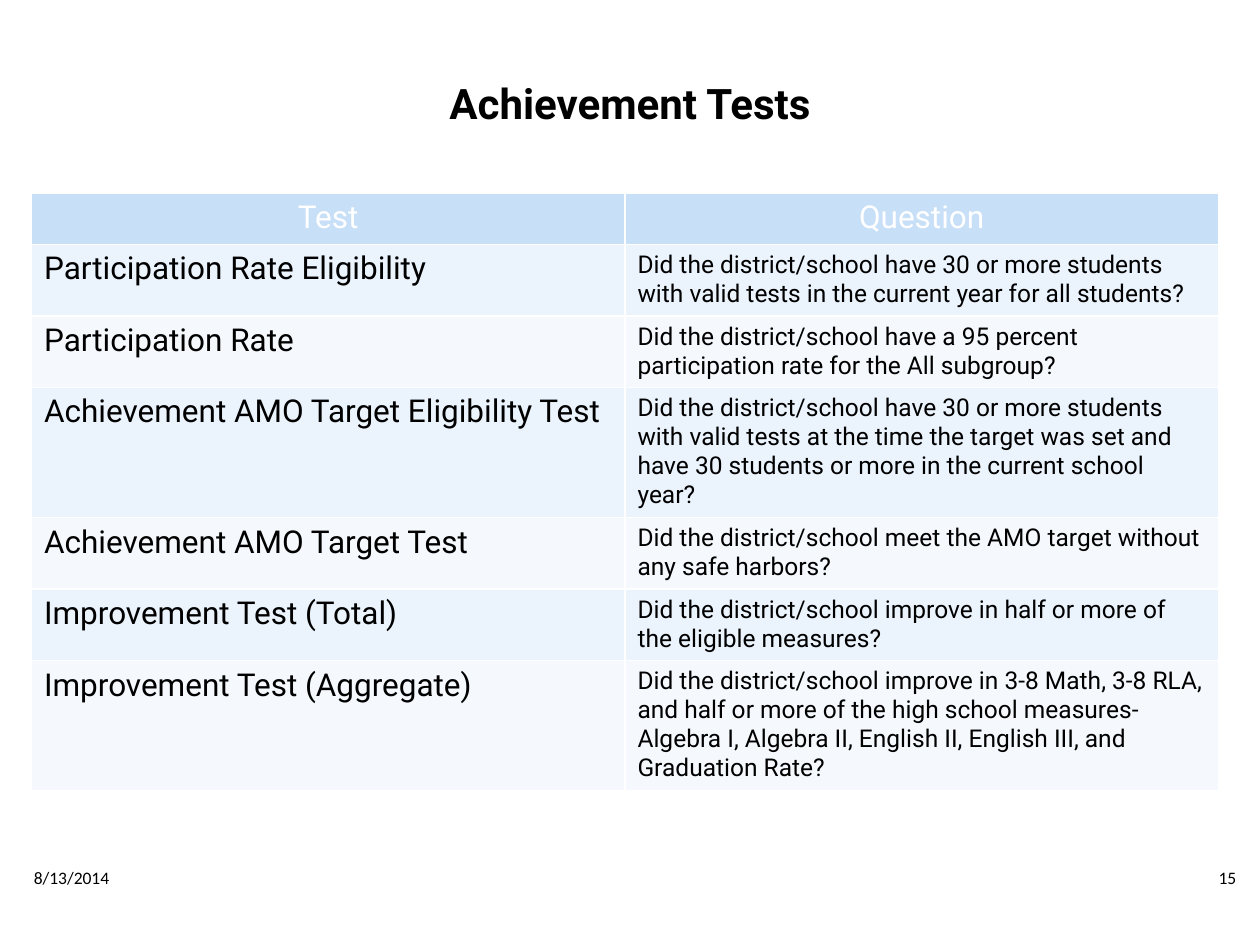
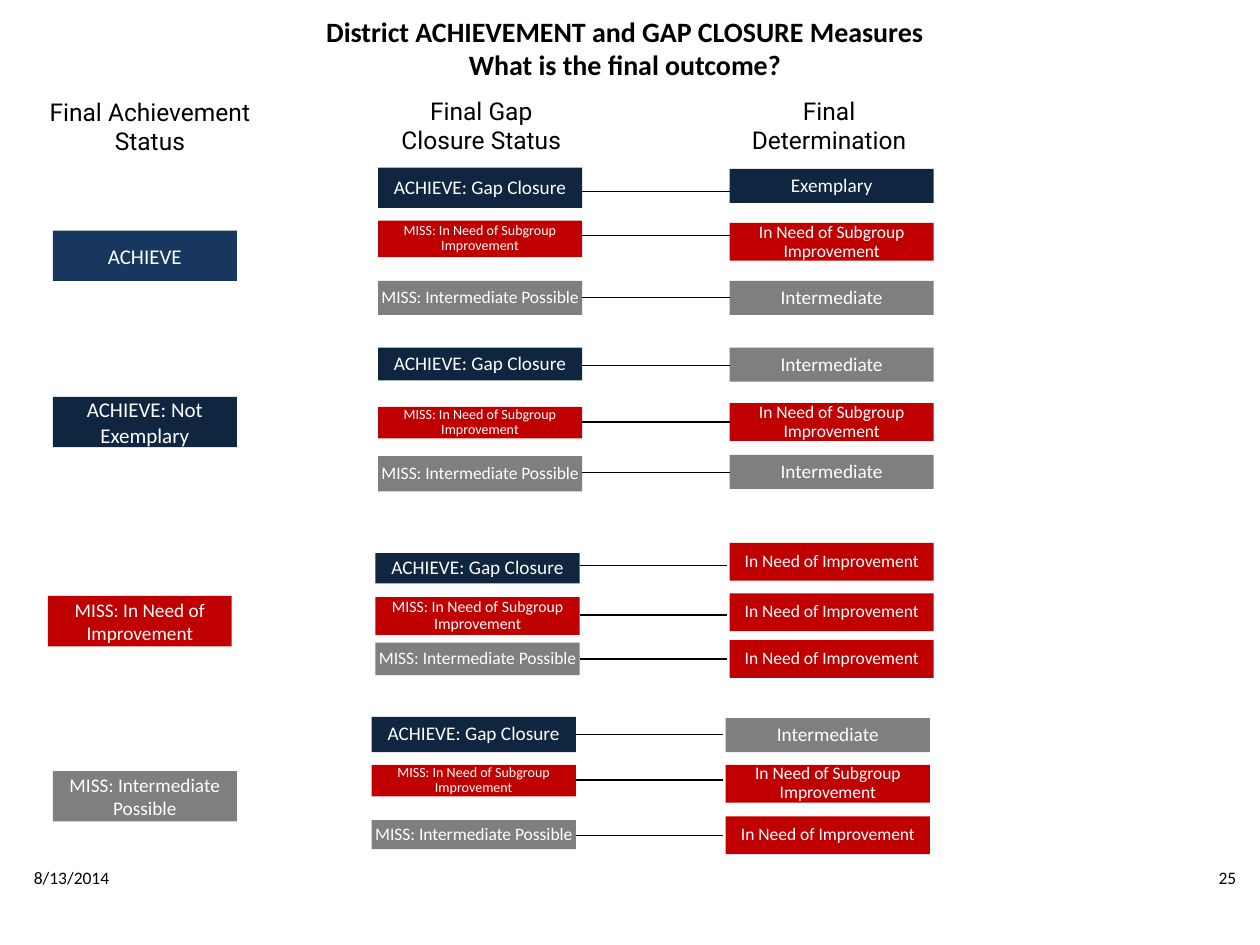
from lxml import etree
from pptx import Presentation
from pptx.dml.color import RGBColor
from pptx.enum.shapes import MSO_CONNECTOR, MSO_SHAPE
from pptx.enum.text import MSO_ANCHOR, MSO_AUTO_SIZE, PP_ALIGN
from pptx.oxml.ns import qn
from pptx.util import Inches, Pt

LEFT, MID, RIGHT = PP_ALIGN.LEFT, PP_ALIGN.CENTER, PP_ALIGN.RIGHT
TOP, CENTER = MSO_ANCHOR.TOP, MSO_ANCHOR.MIDDLE
RECT = MSO_SHAPE.RECTANGLE
STRAIGHT = MSO_CONNECTOR.STRAIGHT
NO_FIT = MSO_AUTO_SIZE.NONE

WIDE, HIGH = 10, 7.5
HEAD, BODY = "Roboto", "Calibri"
BLACK, WHITE = "000000", "FFFFFF"
NAVY, BLUE, RED, GRAY = "10253F", "17375E", "C00000", "7F7F7F"
HEADER, BANDS = "C8DFF8", ("EBF3FC", "F5F9FE")
DATE = "8/13/2014"

TESTS = [
    ("Test", "Question"),
    ("Participation Rate Eligibility",
     "Did the district/school have 30 or more students with valid tests "
     "in the current year for all students?"),
    ("Participation Rate",
     "Did the district/school have a 95 percent participation rate "
     "for the All subgroup?"),
    ("Achievement AMO Target Eligibility Test",
     "Did the district/school have 30 or more students with valid tests "
     "at the time the target was set and have 30 students or more "
     "in the current school year?"),
    ("Achievement AMO Target Test",
     "Did the district/school meet the AMO target without any safe harbors?"),
    ("Improvement Test (Total)",
     "Did the district/school improve in half or more of the eligible "
     "measures?"),
    ("Improvement Test (Aggregate)",
     "Did the district/school improve in 3-8 Math, 3-8 RLA, and half or more "
     "of the high school measures- Algebra I, Algebra II, English II, "
     "English III, and Graduation Rate?"),
]

LABELS = [
    ("Final Achievement Status", 0.18, 0.72, 2.02),
    ("Final Gap Closure Status", 3.03, 0.71, 1.58),
    ("Final Determination", 5.79, 0.71, 1.58),
]

GAPS = [
    ("ACHIEVE: Gap Closure", NAVY, 11),
    ("MISS: In Need of Subgroup Improvement", RED, 8),
    ("MISS: Intermediate Possible", GRAY, 10),
]
BEST = ("Exemplary", NAVY, 11)
SOME = ("Intermediate", GRAY, 11)
PART = ("In Need of Subgroup Improvement", RED, 10)
NEED = ("In Need of Improvement", RED, 10)

TILE, LINK = 1.62, 1.17
STATUS = 1.46, 0.4
SHORT, TALL = 0.27, 0.3

# STATUS_ROWS_PLACEHOLDER
GROUPS = [
    (("ACHIEVE", BLUE, 12), 0.42, 1.83, 3, 5.79, [
        (1.33, 0.32, 1.52, BEST, 1.34),
        (1.75, 0.29, 1.87, PART, 1.77),
        (2.23, 0.27, 2.36, SOME, 2.23)]),
    (("ACHIEVE: Not Exemplary", NAVY, 12), 0.42, 3.15, 3, 5.79, [
        (2.76, 0.26, 2.9, SOME, 2.76),
        (3.23, 0.25, 3.35, PART, 3.2),
        (3.62, 0.28, 3.75, SOME, 3.61)]),
    (("MISS: In Need of Improvement", RED, 11), 0.38, 4.73, 2.98, 5.79, [
        (4.39, 0.24, 4.49, NEED, 4.31),
        (4.74, 0.3, 4.88, NEED, 4.71),
        (5.1, 0.26, 5.23, NEED, 5.08)]),
    (("MISS: Intermediate Possible", GRAY, 11), 0.42, 6.12, 2.95, 5.76, [
        (5.69, 0.28, 5.83, SOME, 5.7),
        (6.07, 0.25, 6.19, PART, 6.07),
        (6.51, 0.23, 6.63, NEED, 6.48)]),
]


def color(code):
    return RGBColor.from_string(code)


def write(frame, text, size, font, tint=BLACK, align=LEFT, bold=False,
          space=None):
    frame.word_wrap = True
    frame.text = text
    for para in frame.paragraphs:
        para.alignment = align
        if space:
            para.line_spacing = space
        for run in para.runs:
            run.font.size = Pt(size)
            run.font.name = font
            run.font.bold = bold
            run.font.color.rgb = color(tint)


def inset(frame, pad):
    frame.margin_left = frame.margin_right = Inches(pad)
    frame.margin_top = frame.margin_bottom = Inches(pad)


def label(slide, text, box, size, font, align=LEFT):
    shape = slide.shapes.add_textbox(*map(Inches, box))
    write(shape.text_frame, text, size, font, align=align)


def start(deck, title, box, size, font, number):
    slide = deck.slides.add_slide(deck.slide_layouts[5])
    shape = slide.shapes.title
    shape.left, shape.top, shape.width, shape.height = map(Inches, box)
    frame = shape.text_frame
    write(frame, title, size, font, align=MID, bold=True)
    for para in frame.paragraphs:
        para.space_before = Pt(0)
    frame.auto_size = NO_FIT
    frame.vertical_anchor = CENTER
    label(slide, DATE, (0.17, 6.83, 2.33, 0.52), 10, BODY)
    label(slide, number, (7.58, 6.83, 2.33, 0.52), 10, BODY, RIGHT)
    return slide


def border(cell):
    props = cell._tc.get_or_add_tcPr()
    for spot, side in enumerate(("a:lnL", "a:lnR", "a:lnT", "a:lnB")):
        line = etree.Element(qn(side), w=str(Pt(1)))
        fill = etree.SubElement(line, qn("a:solidFill"))
        etree.SubElement(fill, qn("a:srgbClr"), val=WHITE)
        props.insert(spot, line)


def grid(slide, rows, box):
    frame = slide.shapes.add_table(len(rows), len(rows[0]), *map(Inches, box))
    for r, texts in enumerate(rows):
        for c, text in enumerate(texts):
            cell = frame.table.cell(r, c)
            top = r == 0
            size = 18 if top or c == 0 else 14
            write(cell.text_frame, text, size, HEAD,
                  WHITE if top else BLACK, MID if top else LEFT)
            cell.vertical_anchor = TOP
            cell.fill.solid()
            cell.fill.fore_color.rgb = color(HEADER if top else BANDS[(r - 1) % 2])
            border(cell)


def tile(slide, kind, box, space=0.9):
    text, fill, size = kind
    shape = slide.shapes.add_shape(RECT, *map(Inches, box))
    shape.shadow.inherit = False
    shape.fill.solid()
    shape.fill.fore_color.rgb = color(fill)
    shape.line.fill.background()
    frame = shape.text_frame
    inset(frame, 0.01)
    frame.vertical_anchor = CENTER
    write(frame, text, size, BODY, WHITE, MID, space=space)


def link(slide, left, top):
    ends = map(Inches, (left, top, left + LINK, top))
    line = slide.shapes.add_connector(STRAIGHT, *ends)
    line.line.color.rgb = color(BLACK)
    line.line.width = Pt(0.75)
    etree.SubElement(line._element.spPr, qn("a:effectLst"))


def group(slide, status, left, top, gap_x, end_x, rows):
    tile(slide, status, (left, top, *STATUS), 1)
    for gap, (y, high, mid, result, end_y) in zip(GAPS, rows):
        text, fill, size = gap
        if high == TALL:
            size = 9
        tile(slide, (text, fill, size), (gap_x, y, TILE, high))
        tall = SHORT if result in (BEST, SOME) else TALL
        tile(slide, result, (end_x, end_y, TILE, tall))
        link(slide, gap_x + TILE, mid)


def main():
    deck = Presentation()
    deck.slide_width, deck.slide_height = Inches(WIDE), Inches(HIGH)

    tests = start(deck, "Achievement Tests", (0.5, 0.3, 9, 1.03), 24, HEAD, "15")
    grid(tests, TESTS, (0.25, 1.53, 9.42, 0.41 * len(TESTS)))

    final = start(deck, "District ACHIEVEMENT and GAP CLOSURE Measures\n"
                  "What is the final outcome?",
                  (0.17, 0.17, 9.58, 0.42), 16, BODY, "25")
    inset(final.shapes.title.text_frame, 0.03)
    for text, left, top, wide in LABELS:
        label(final, text, (left, top, wide, 0.57), 14, HEAD, MID)
    for item in GROUPS:
        group(final, *item)

    deck.save("out.pptx")


if __name__ == "__main__":
    main()
